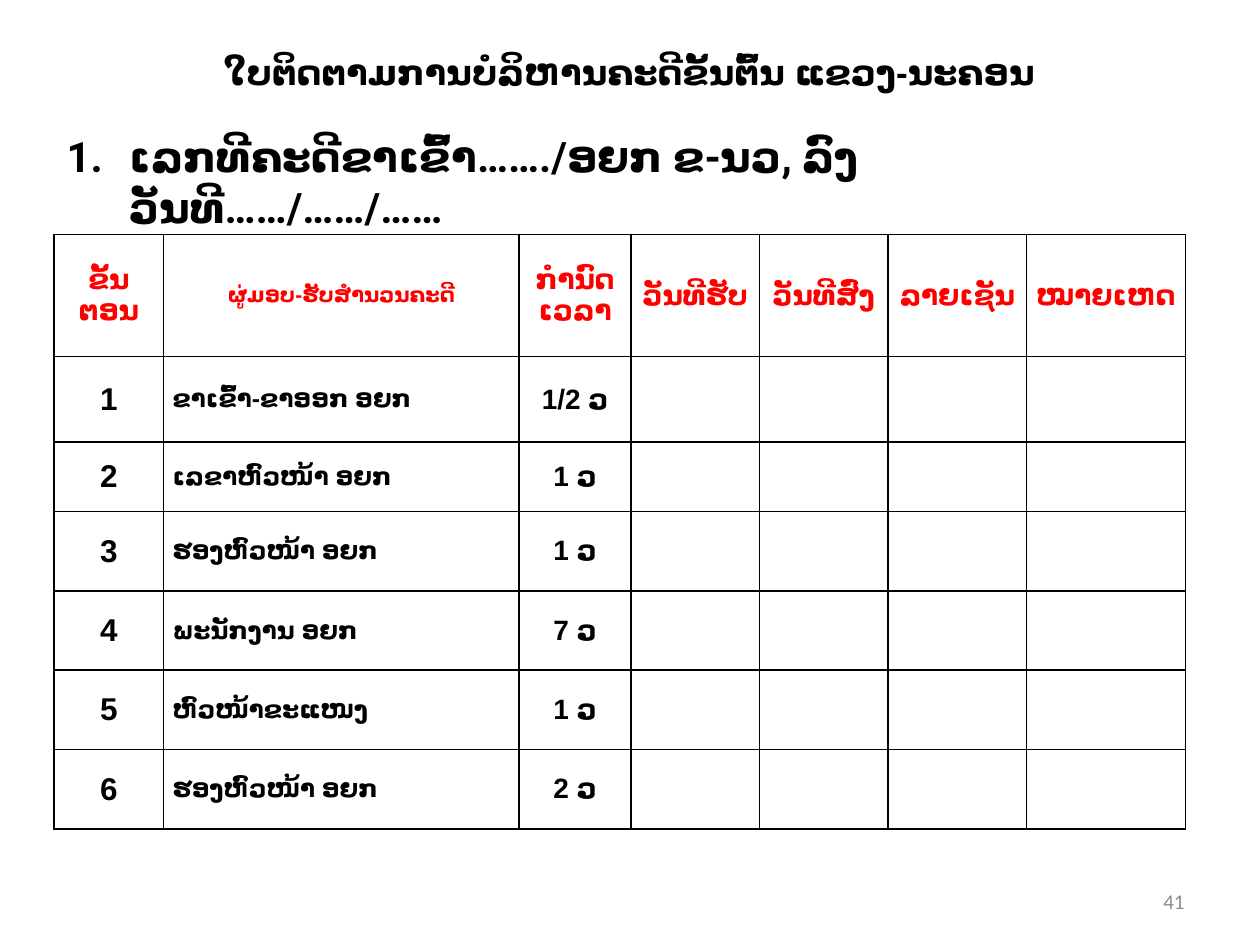
from lxml.etree import SubElement
from pptx import Presentation
from pptx.dml.color import RGBColor
from pptx.enum.text import MSO_ANCHOR, PP_ALIGN
from pptx.oxml.ns import qn
from pptx.util import Inches, Pt

COLORS = {"ink": "000000", "head": "FF0000", "number": "8C8C8C"}
LEFT = 0.43
COLS = [0.87, 2.82, 0.89, 1.02, 1.02, 1.1, 1.26]
ROWS = [0.97, 0.68, 0.55] + [0.63] * 4
HEADERS = ["ຂັ້ນ\nຕອນ", "ຜູ່ມອບ-ຮັບສໍານວນຄະດີ", "ກໍານົດເວລາ", "ວັນທີຮັບ",
           "ວັນທີສົ່ງ", "ລາຍເຊັນ", "ໝາຍເຫດ"]
STEPS = [
    ("ຂາເຂົ້າ-ຂາອອກ ອຍກ", "1/2 ວ"),
    ("ເລຂາຫົວໜ້າ ອຍກ", "1 ວ"),
    ("ຮອງຫົວໜ້າ ອຍກ", "1 ວ"),
    ("ພະນັກງານ ອຍກ", "7 ວ"),
    ("ຫົວໜ້າຂະແໜງ", "1 ວ"),
    ("ຮອງຫົວໜ້າ ອຍກ", "2 ວ"),
]


def write(tf, text, size, color="ink", font="Arial", bold=True,
          align=PP_ALIGN.CENTER, anchor=MSO_ANCHOR.MIDDLE):
    """Fill a text frame, one paragraph a line, in Latin and Lao script alike."""
    tf.word_wrap = True
    tf.vertical_anchor = anchor
    for i, line in enumerate(text.split("\n")):
        p = tf.add_paragraph() if i else tf.paragraphs[0]
        p.alignment = align
        r = p.add_run()
        r.text = line
        r.font.size, r.font.bold, r.font.name = Pt(size), bold, font
        r.font.color.rgb = RGBColor.from_string(COLORS[color])
        SubElement(r.font._element, qn("a:cs"), typeface=font)


def border(cell):
    """Draw a 1 pt line on all four sides of a cell without fill."""
    tcPr = cell._tc.get_or_add_tcPr()
    for side in ("lnL", "lnR", "lnT", "lnB"):
        ln = SubElement(tcPr, qn(f"a:{side}"), w=str(Pt(1)))
        SubElement(SubElement(ln, qn("a:solidFill")), qn("a:srgbClr"), val=COLORS["ink"])
    cell.fill.background()


prs = Presentation()
prs.slide_width, prs.slide_height = Inches(10), Inches(7.5)
s = prs.slides.add_slide(prs.slide_layouts[5])

# Title
title = s.shapes.title
title.left, title.top = Inches(LEFT), Inches(0.15)
title.width, title.height = Inches(9.13), Inches(0.84)
write(title.text_frame, "ໃບຕິດຕາມການບໍລິຫານຄະດີຂັ້ນຕົ້ນ ແຂວງ-ນະຄອນ", 20)

# Numbered case line
case = s.shapes.add_textbox(Inches(LEFT), Inches(0.99), Inches(8.74), Inches(1.02))
write(case.text_frame, "ເລກທີຄະດີຂາເຂົ້າ……./ອຍກ ຂ-ນວ, ລົງວັນທີ……/……/……", 24,
      font="Roboto", align=PP_ALIGN.LEFT, anchor=MSO_ANCHOR.TOP)
pPr = case.text_frame.paragraphs[0]._p.get_or_add_pPr()
pPr.set("marL", str(Inches(0.5)))
pPr.set("indent", str(-Inches(0.5)))
SubElement(pPr, qn("a:buFont"), typeface="Arial")
SubElement(pPr, qn("a:buAutoNum"), type="arabicPeriod")

# Tracking table
table = s.shapes.add_table(len(ROWS), len(COLS), Inches(LEFT), Inches(1.86),
                           Inches(sum(COLS)), Inches(sum(ROWS))).table
for column, width in zip(table.columns, COLS):
    column.width = Inches(width)
for row, height in zip(table.rows, ROWS):
    row.height = Inches(height)
for cell in table.iter_cells():
    cell.margin_left = cell.margin_right = Inches(0.07)
    cell.margin_top = cell.margin_bottom = 0
    cell.vertical_anchor = MSO_ANCHOR.MIDDLE
    border(cell)

for c, text in enumerate(HEADERS):
    write(table.cell(0, c).text_frame, text, 12 if c == 1 else 16, color="head", anchor=None)
for n, (person, time) in enumerate(STEPS, start=1):
    write(table.cell(n, 0).text_frame, str(n), 18, anchor=None)
    write(table.cell(n, 1).text_frame, person, 14, align=PP_ALIGN.LEFT, anchor=None)
    write(table.cell(n, 2).text_frame, time, 16, anchor=None)

# Slide number
number = s.shapes.add_textbox(Inches(7.17), Inches(6.95), Inches(2.33), Inches(0.4))
write(number.text_frame, "41", 12, color="number", font="Calibri", bold=False,
      align=PP_ALIGN.RIGHT)

prs.save("out.pptx")
